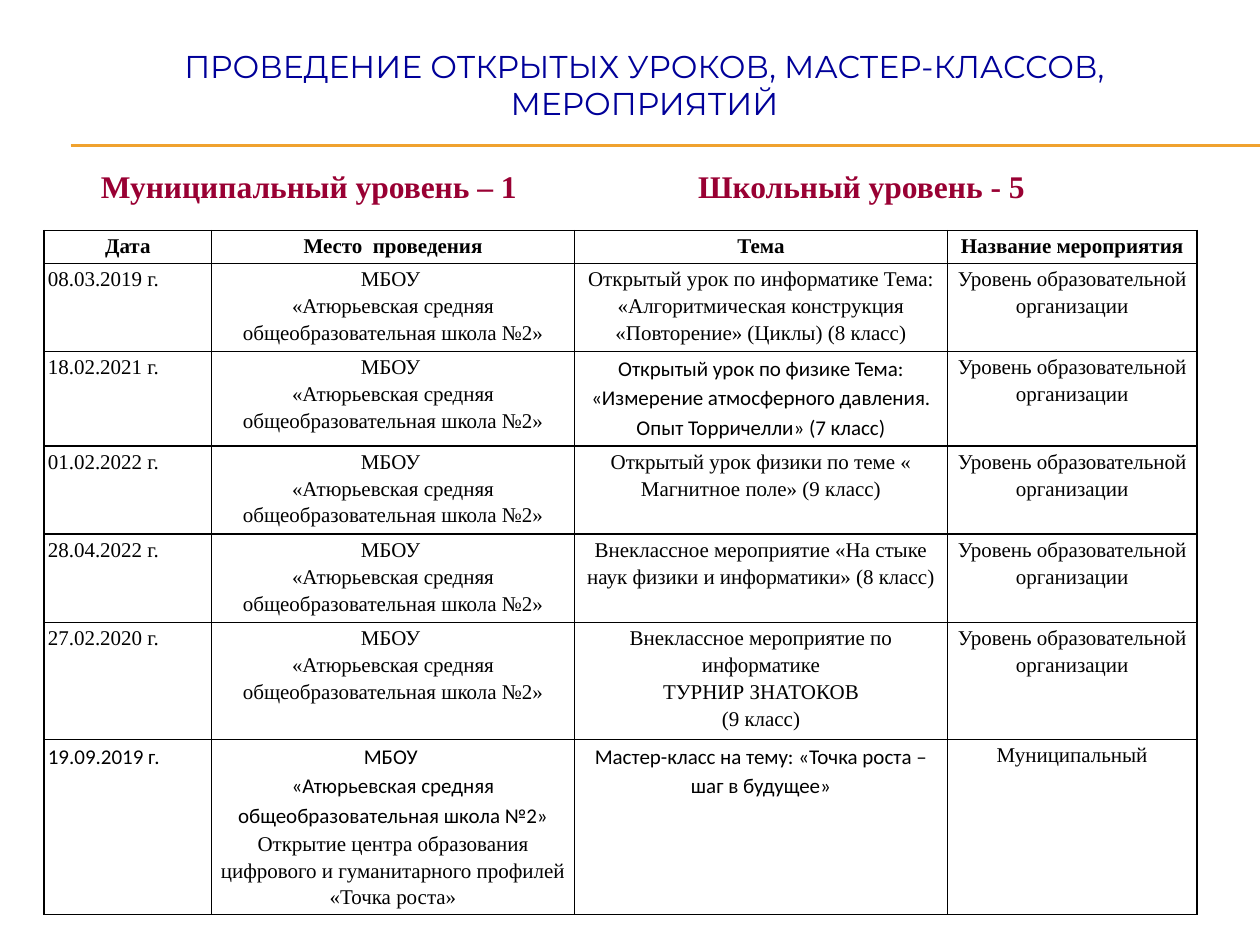
from dataclasses import dataclass

from lxml.etree import SubElement
from pptx import Presentation
from pptx.dml.color import RGBColor
from pptx.enum.shapes import MSO_CONNECTOR
from pptx.enum.text import MSO_ANCHOR, MSO_AUTO_SIZE, PP_ALIGN
from pptx.oxml.ns import qn
from pptx.util import Inches, Pt

SERIF, SANS = "Times New Roman", "Calibri"
SCHOOL = "МБОУ \n«Атюрьевская средняя общеобразовательная школа №2»"
LEVEL = "Уровень образовательной организации"
COLS = (1.33, 2.88, 2.96, 1.98)
ROWS = (0.26, 0.67, 0.75, 0.67, 0.67, 0.89, 1.33)


@dataclass
class Part:
    """A piece of text in one font, with an optional new paragraph before it."""
    text: str
    font: str = SERIF
    new: bool = False


@dataclass
class Event:
    """One row of the table."""
    date: Part
    place: tuple[Part, ...]
    topic: tuple[Part, ...]
    level: str = LEVEL

    def cells(self) -> list[tuple[Part, ...]]:
        """Return the four cells of the row."""
        return [(self.date,), self.place, self.topic, (Part(self.level),)]


HEADER = [(Part(t),) for t in ("Дата", "Место  проведения", "Тема", "Название мероприятия")]
EVENTS = [
    Event(Part("08.03.2019 г."), (Part(SCHOOL),),
          (Part("Открытый урок по информатике Тема: «Алгоритмическая конструкция "
                "«Повторение» (Циклы) (8 класс)"),)),
    Event(Part("18.02.2021 г."), (Part(SCHOOL),),
          (Part("Открытый урок по физике Тема: «Измерение атмосферного давления. "
                "Опыт Торричелли» (7 класс)", SANS),)),
    Event(Part("01.02.2022 г."), (Part(SCHOOL),),
          (Part("Открытый урок физики по теме « Магнитное поле» (9 класс)"),)),
    Event(Part("28.04.2022 г."), (Part(SCHOOL),),
          (Part("Внеклассное мероприятие «На стыке наук физики и информатики» (8 класс)"),)),
    Event(Part("27.02.2020 г."), (Part(SCHOOL),),
          (Part("Внеклассное мероприятие по информатике"),
           Part("ТУРНИР ЗНАТОКОВ", new=True), Part("(9 класс)", new=True))),
    Event(Part("19.09.2019 г.", SANS),
          (Part(SCHOOL + " ", SANS),
           Part("Открытие центра образования цифрового и гуманитарного профилей «Точка роста»")),
          (Part("Мастер-класс на тему: «Точка роста – шаг в будущее»", SANS),),
          "Муниципальный"),
]


def rgb(value: str) -> RGBColor:
    """Turn a hex string into a colour."""
    return RGBColor.from_string(value)


def apply(obj, **values) -> None:
    """Set attributes from a dict of format values."""
    for name, value in values.items():
        setattr(obj, name, value)


def style(font, name: str, size: float, color: str, bold: bool = False) -> None:
    """Format a font."""
    apply(font, name=name, size=Pt(size), bold=bold)
    font.color.rgb = rgb(color)


def add_rule(slide, y: float) -> None:
    """Draw a horizontal rule under the title."""
    ln = slide.shapes.add_connector(MSO_CONNECTOR.STRAIGHT, Inches(0.56), Inches(y),
                                    Inches(10), Inches(y))
    ln.line.color.rgb = rgb("F0A22E")
    ln.line.width = Pt(0.75)
    SubElement(ln._element.spPr, qn("a:effectLst"))


def add_title(slide) -> None:
    """Fill and place the title."""
    sp = slide.shapes.title
    apply(sp, left=Inches(0.39), top=Inches(0.16), width=Inches(9.45), height=Inches(1.02))
    tf = sp.text_frame
    apply(tf, auto_size=MSO_AUTO_SIZE.NONE, vertical_anchor=MSO_ANCHOR.MIDDLE, word_wrap=True)
    p = tf.paragraphs[0]
    p.alignment = PP_ALIGN.CENTER
    r = p.add_run()
    r.text = "ПРОВЕДЕНИЕ ОТКРЫТЫХ УРОКОВ, МАСТЕР-КЛАССОВ, МЕРОПРИЯТИЙ"
    style(r.font, "Montserrat", 18, "000099")


def add_levels(slide) -> None:
    """Write the level counts, the second one at a tab stop."""
    sp = slide.shapes.add_textbox(Inches(0.67), Inches(1.23), Inches(7.61), Inches(0.45))
    tf = sp.text_frame
    apply(tf, word_wrap=True, margin_left=Inches(0.13))
    p = tf.paragraphs[0]
    p.line_spacing = 1.15
    tabs = SubElement(p._p.get_or_add_pPr(), qn("a:tabLst"))
    SubElement(tabs, qn("a:tab"), pos=str(Inches(4.74)), algn="l")
    r = p.add_run()
    r.text = "Муниципальный уровень – 1\tШкольный уровень - 5"
    style(r.font, SERIF, 18, "990033", True)


def border(cell) -> None:
    """Give a cell thin black edges."""
    pr = cell._tc.get_or_add_tcPr()
    for i, side in enumerate(("lnL", "lnR", "lnT", "lnB")):
        ln = SubElement(pr, qn(f"a:{side}"), w=str(Pt(1)))
        pr.insert(i, ln)
        SubElement(SubElement(ln, qn("a:solidFill")), qn("a:srgbClr"), val="000000")


def fill_cell(cell, parts: tuple[Part, ...], align: PP_ALIGN, bold: bool) -> None:
    """Write and format one cell."""
    apply(cell, margin_left=Inches(0.03), margin_right=Inches(0.03),
          margin_top=Inches(0.01), margin_bottom=0)
    cell.fill.background()
    border(cell)
    tf = cell.text_frame
    p = tf.paragraphs[0]
    for part in parts:
        if part.new:
            p = tf.add_paragraph()
        apply(p, alignment=align, line_spacing=1.15)
        for i, line in enumerate(part.text.split("\n")):
            if i:
                p.add_line_break()
                SubElement(p._p[-1], qn("a:rPr"), sz="1200")
            r = p.add_run()
            r.text = line
            style(r.font, part.font, 12, "000000", bold)


def add_events(slide) -> None:
    """Draw the table of events."""
    rows = [HEADER] + [e.cells() for e in EVENTS]
    tbl = slide.shapes.add_table(len(ROWS), len(COLS), Inches(0.35), Inches(1.83),
                                 Inches(sum(COLS)), Inches(sum(ROWS))).table
    apply(tbl, first_row=False, horz_banding=False)
    for col, w in zip(tbl.columns, COLS):
        col.width = Inches(w)
    for i, (row, h) in enumerate(zip(tbl.rows, ROWS)):
        row.height = Inches(h)
        for j, parts in enumerate(rows[i]):
            align = PP_ALIGN.LEFT if i and j == 0 else PP_ALIGN.CENTER
            fill_cell(tbl.cell(i, j), parts, align, i == 0)


def main() -> None:
    """Build the slide."""
    prs = Presentation()
    apply(prs, slide_width=Inches(10), slide_height=Inches(7.5))
    s = prs.slides.add_slide(prs.slide_layouts[5])
    for y in (1.15, 1.16):
        add_rule(s, y)
    add_title(s)
    add_levels(s)
    add_events(s)
    prs.save("out.pptx")


if __name__ == "__main__":
    main()
